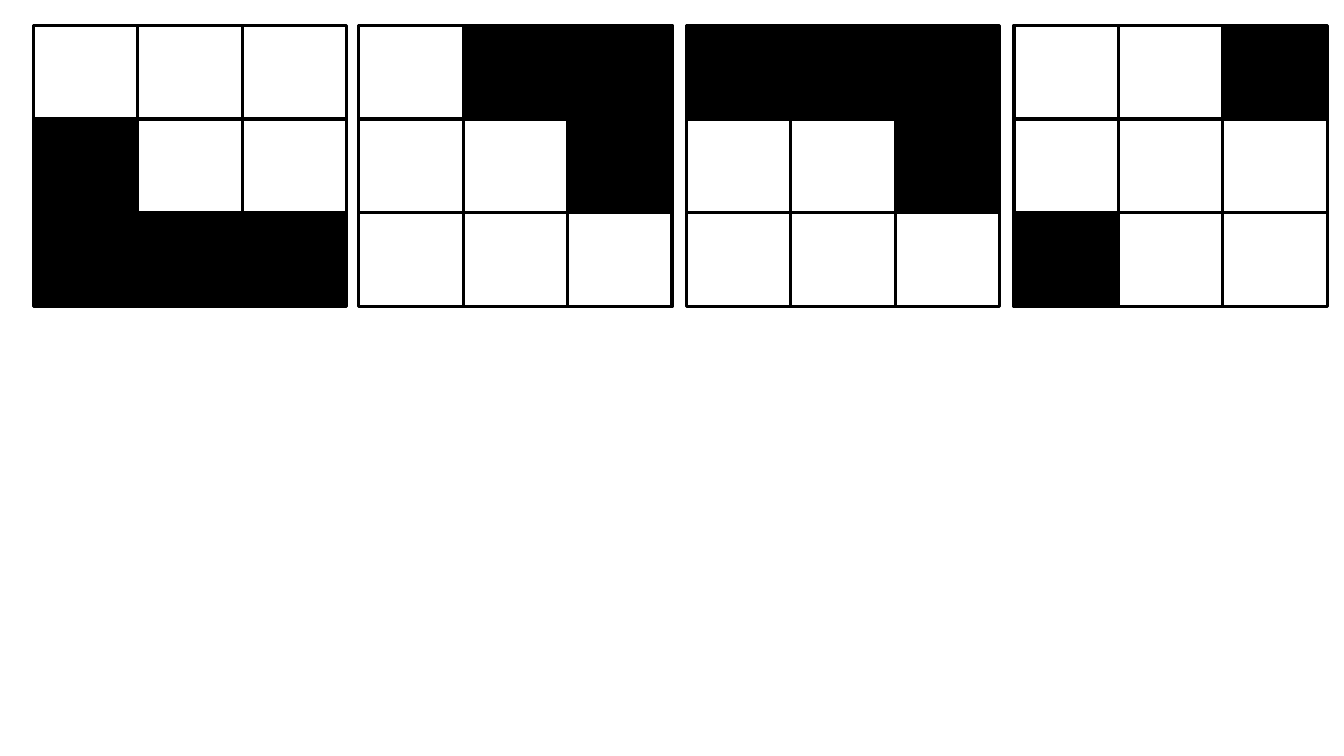
from dataclasses import dataclass

from pptx import Presentation
from pptx.dml.color import RGBColor
from pptx.enum.shapes import MSO_SHAPE
from pptx.slide import Slide
from pptx.util import Pt

RECT = MSO_SHAPE.RECTANGLE
COLORS = {"#": "000000", ".": "FFFFFF", "line": "000000"}
TOP = 18
CELL_W = 74.6
CELL_H = 67
LINE_W = 2.25


@dataclass(frozen=True)
class Grid:
    left: float
    rows: tuple[str, ...]


GRIDS = (
    Grid(23.8, ("...", "#..", "###")),
    Grid(256.3, (".##", "..#", "...")),
    Grid(490.3, ("###", "..#", "...")),
    Grid(724.3, ("..#", "...", "#..")),
)


def draw_cell(slide: Slide, left: float, top: float, mark: str) -> None:
    cell = slide.shapes.add_shape(RECT, Pt(left), Pt(top), Pt(CELL_W), Pt(CELL_H))
    cell.shadow.inherit = False
    cell.fill.solid()
    cell.fill.fore_color.rgb = RGBColor.from_string(COLORS[mark])
    cell.line.color.rgb = RGBColor.from_string(COLORS["line"])
    cell.line.width = Pt(LINE_W)


def draw_grid(slide: Slide, grid: Grid) -> None:
    for row, marks in enumerate(grid.rows):
        for col, mark in enumerate(marks):
            draw_cell(slide, grid.left + col * CELL_W, TOP + row * CELL_H, mark)


def main() -> None:
    deck = Presentation()
    deck.slide_width = Pt(960)
    deck.slide_height = Pt(540)
    slide = deck.slides.add_slide(deck.slide_layouts[6])
    for grid in GRIDS:
        draw_grid(slide, grid)
    deck.save("out.pptx")


if __name__ == "__main__":
    main()
